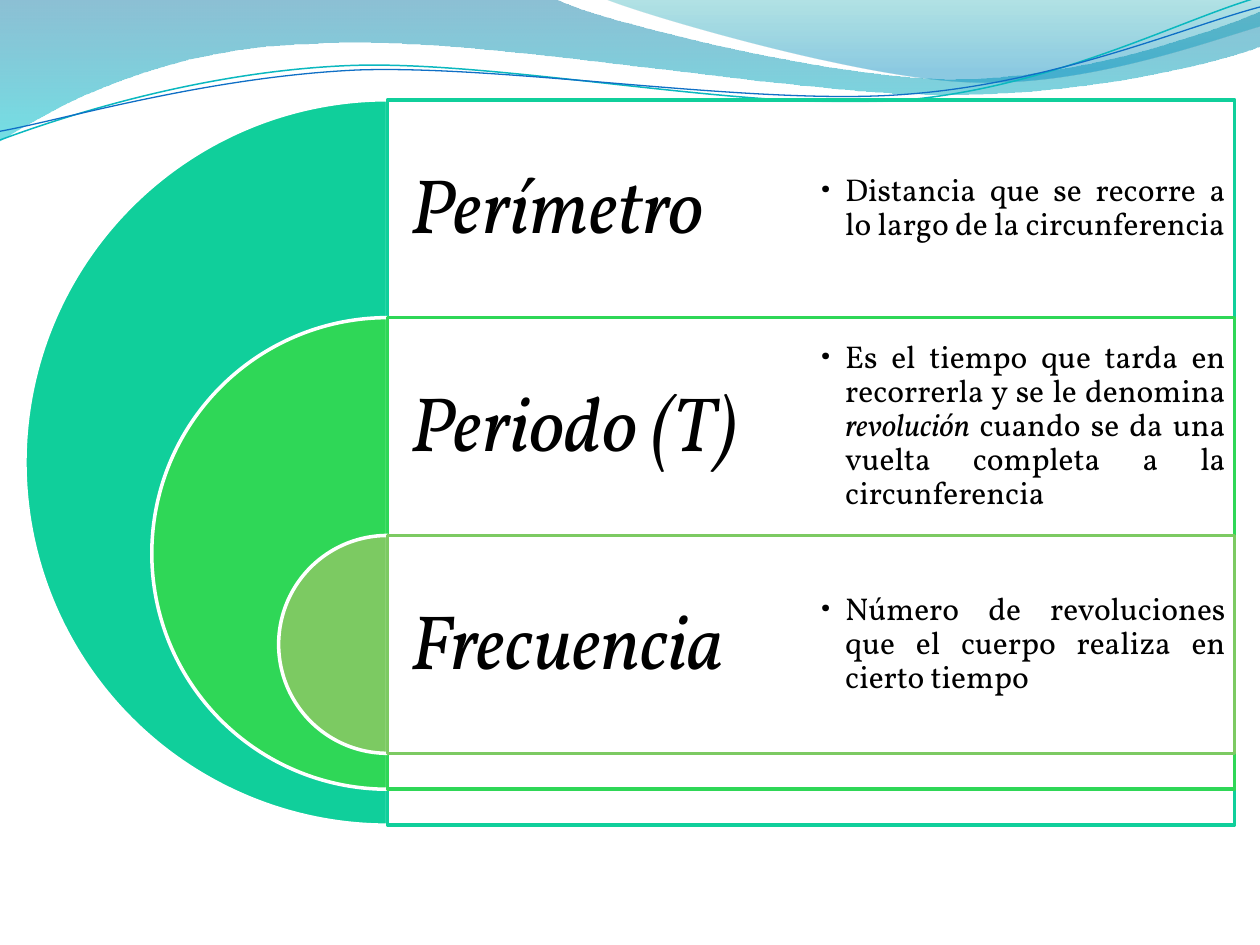
"""Build a slide that defines perimeter, period and frequency with nested half circles."""
from lxml.etree import SubElement
from pptx import Presentation
from pptx.dml.color import RGBColor
from pptx.enum.shapes import MSO_SHAPE
from pptx.enum.text import MSO_ANCHOR, PP_ALIGN
from pptx.oxml.ns import qn
from pptx.util import Pt

COLORS = {
    "white": "FFFFFF", "black": "000000",
    "emerald": "10CF9B", "green": "2FD757", "olive": "7CCA62",
    "deep blue": "0074A1", "cyan": "00C6CF", "teal": "00A1A9",
    "sky": "008BBF", "teal line": "0AB8BF", "blue line": "0F6FC6",
}
COLORS = {name: RGBColor.from_string(value) for name, value in COLORS.items()}
FONT = "Vollkorn"


def add_text(slide, pieces, left, top, width, height, size, inset, space, bullet=False):
    frame = slide.shapes.add_textbox(Pt(left), Pt(top), Pt(width), Pt(height)).text_frame
    frame.word_wrap = True
    frame.vertical_anchor = MSO_ANCHOR.MIDDLE
    frame.margin_left = frame.margin_right = Pt(inset)
    frame.margin_top = frame.margin_bottom = Pt(inset)
    paragraph = frame.paragraphs[0]
    paragraph.alignment = PP_ALIGN.JUSTIFY
    paragraph.line_spacing = 0.9
    paragraph.space_after = Pt(size * space)
    for text, italic in pieces:
        run = paragraph.add_run()
        run.text = text
        run.font.name = FONT
        run.font.size = Pt(size)
        run.font.italic = italic
        run.font.color.rgb = COLORS["black"]
    if bullet:
        properties = paragraph._p.get_or_add_pPr()
        properties.set("marL", str(Pt(14.25)))
        properties.set("indent", str(Pt(-14.25)))
        SubElement(properties, qn("a:buFont")).set("typeface", FONT)
        SubElement(properties, qn("a:buChar")).set("char", "•")


def add_wave(slide, start, segments, close):
    points = [
        (Pt(x), Pt(y)) for segment in segments for x, y in zip(segment[::2], segment[1::2])
    ]
    builder = slide.shapes.build_freeform(Pt(start[0]), Pt(start[1]), scale=1)
    builder.add_line_segments(points, close=close)
    shape = builder.convert_to_shape()
    shape.shadow.inherit = False
    steps = list(shape._element.spPr.iter(qn("a:lnTo")))
    for segment in segments:
        count = len(segment) // 2
        group, steps = steps[:count], steps[count:]
        if count == 3:
            curve = SubElement(group[0].getparent(), qn("a:cubicBezTo"))
            group[0].addprevious(curve)
            for step in group:
                curve.append(step[0])
                step.getparent().remove(step)
    return shape


presentation = Presentation()
presentation.slide_width = Pt(720)
presentation.slide_height = Pt(540)
slide = presentation.slides.add_slide(presentation.slide_layouts[6])

filled_waves = [
    ((0, 0), [
        (317, -1),
        (343, 12, 478, 45, 546, 45), (614, 45, 690, 19, 720, 6.5),
        (721, 26),
        (708, 32, 626, 55, 537, 54), (448, 54, 275, 20, 185, 24.5),
        (93, 26, 33, 60, -0.7, 81),
    ], [(0, "deep blue", 45), (1, "cyan", 55)]),
    ((345, -1), [
        (366, 8, 491, 45, 554, 47), (620, 50, 692, 23, 720, 15),
        (720, 0),
    ], [(0, "teal", 30), (0.8, "sky", 45)]),
]
for start, segments, stops in filled_waves:
    wave = add_wave(slide, start, segments, close=True)
    wave.line.fill.background()
    wave.fill.gradient()
    wave.fill.gradient_angle = 270
    for gradient_stop, (position, color, opacity) in zip(wave.fill.gradient_stops, stops):
        gradient_stop.position = position
        gradient_stop.color.rgb = COLORS[color]
    for element, (position, color, opacity) in zip(wave._element.spPr.iter(qn("a:srgbClr")), stops):
        SubElement(element, qn("a:alpha")).set("val", str(opacity * 1000))

line_waves = [
    ((0, 80), [
        (35, 67, 114, 41, 199, 37.5), (284, 34, 427, 64, 513, 57.5),
        (600, 51, 675, 11, 719, -1.5),
    ], "teal line", 0.85),
    ((0, 75), [
        (34, 69, 118, 44, 204, 40), (290, 37, 430, 60.5, 516, 54),
        (602, 48, 678, 15, 720, 4),
    ], "blue line", 0.75),
]
for start, segments, color, width in line_waves:
    wave = add_wave(slide, start, segments, close=False)
    wave.fill.background()
    wave.line.color.rgb = COLORS[color]
    wave.line.width = Pt(width)

concepts = [
    ("Perímetro", "emerald",
     [("Distancia que se recorre a lo largo de la circunferencia", False)]),
    ("Periodo (T)", "green",
     [("Es el tiempo que tarda en recorrerla y se le denomina ", False),
      ("revolución ", True),
      ("cuando se da una vuelta completa a la circunferencia", False)]),
    ("Frecuencia", "olive",
     [("Número de revoluciones que el cuerpo realiza en cierto tiempo", False)]),
]
center, first_top, row_height, column_width = 221.5, 57, 124.5, 242
for index, (name, color, definition) in enumerate(concepts):
    top = first_top + index * row_height
    diameter = 414.5 - index * 145
    half_circle = slide.shapes.add_shape(
        MSO_SHAPE.PIE, Pt(center - diameter / 2), Pt(top), Pt(diameter), Pt(diameter))
    half_circle.adjustments[0] = 54
    half_circle.adjustments[1] = 162
    panel = slide.shapes.add_shape(
        MSO_SHAPE.RECTANGLE, Pt(center), Pt(top), Pt(2 * column_width), Pt(diameter))
    for shape, fill, line in ((half_circle, color, "white"), (panel, "white", color)):
        shape.shadow.inherit = False
        shape.fill.solid()
        shape.fill.fore_color.rgb = COLORS[fill]
        shape.line.color.rgb = COLORS[line]
        shape.line.width = Pt(2)
    panel_color = panel._element.spPr.find(qn("a:solidFill")).find(qn("a:srgbClr"))
    SubElement(panel_color, qn("a:alpha")).set("val", "90000")
    add_text(slide, [(name, True)], center, top, column_width, row_height,
             size=44, inset=13, space=0.35)
    add_text(slide, definition, center + column_width, top, column_width, row_height,
             size=18, inset=5.25, space=0.15, bullet=True)

presentation.save("out.pptx")
